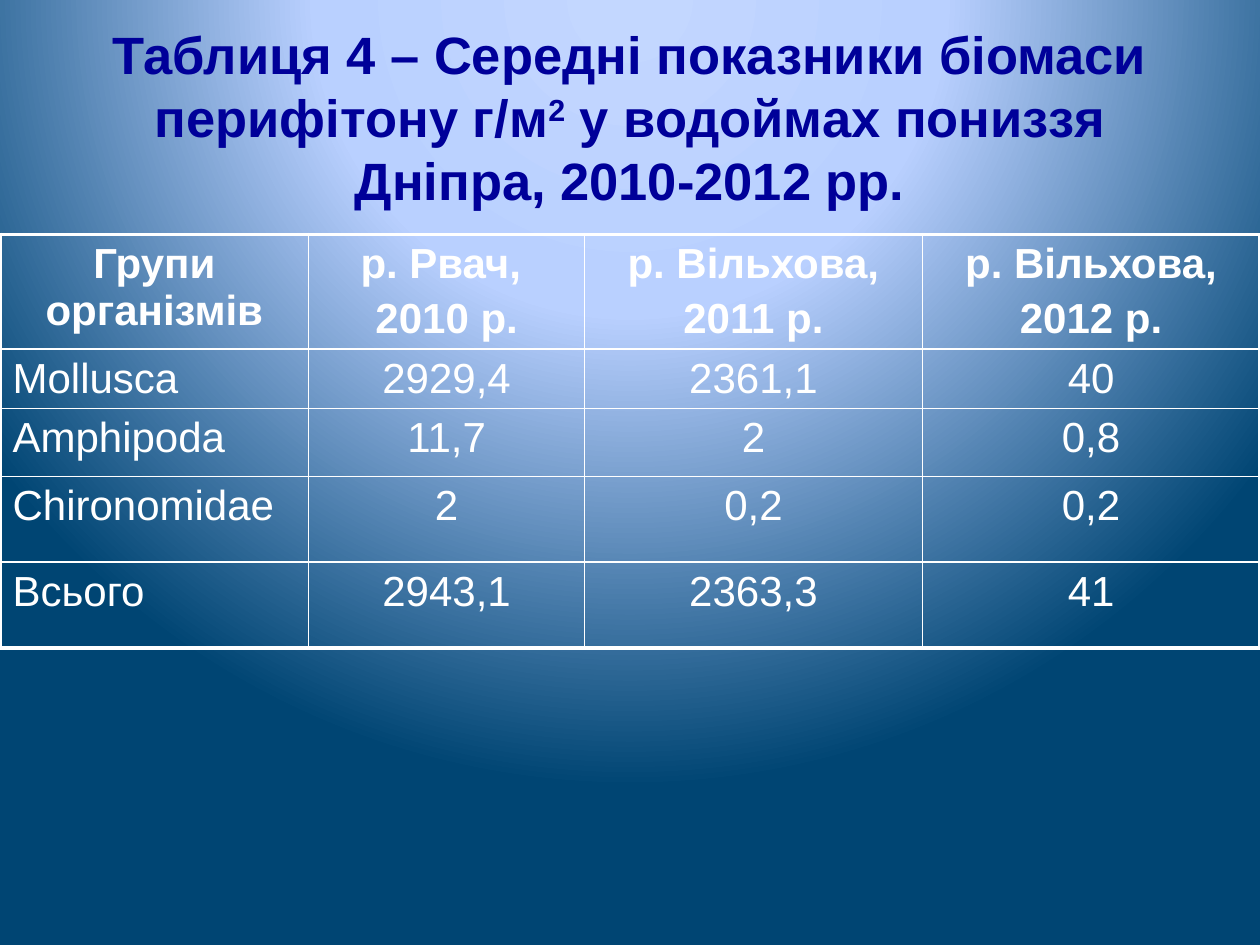
import pptx
import pptx.util
import pptx.dml.color
import pptx.enum.text
import pptx.oxml
from pptx.oxml.ns import nsdecls
from pptx.util import Inches, Pt

# Content
TITLE = [
    ("Таблиця 4 – Середні показники біомаси перифітону г/м", False),
    ("2", True),
    (" у водоймах пониззя Дніпра, 2010-2012 рр.", False),
]
BIOMASS = [
    ("Групи організмів", "р. Рвач, \n2010 р.", "р. Вільхова,\n2011 р.", "р. Вільхова,\n2012 р."),
    ("Mollusca", "2929,4", "2361,1", "40"),
    ("Amphipoda", "11,7", "2", "0,8"),
    ("Chironomidae", "2", "0,2", "0,2"),
    ("Всього", "2943,1", "2363,3", "41"),
]

# Layout and formats
COLUMN_WIDTHS = [2.45, 2.19, 2.68, 2.68]
ROW_HEIGHTS = [0.91, 0.47, 0.54, 0.68, 0.68]
TABLE_TOP = 1.86
INNER_LINE, OUTER_LINE = 1, 2.25
WHITE, NAVY = "FFFFFF", "000099"
BACKGROUND = [(0, "C3D7FF"), (40, "B9D0FF"), (100, "004573")]
TITLE_FONT = {"name": "Arial", "size": Pt(30), "bold": True}
HEADER_FONT = {"name": "Arial", "size": Pt(24), "bold": True}
BODY_FONT = {**HEADER_FONT, "bold": False}
ALIGN = pptx.enum.text.PP_ALIGN


def format_font(font, values, colour):
    for key, value in values.items():
        setattr(font, key, value)
    font.color.rgb = pptx.dml.color.RGBColor.from_string(colour)


def set_background(slide):
    stops = "".join(
        f'<a:gs pos="{position * 1000}"><a:srgbClr val="{colour}"/></a:gs>'
        for position, colour in BACKGROUND)
    gradient = pptx.oxml.parse_xml(
        f'<a:gradFill {nsdecls("a")} rotWithShape="1"><a:gsLst>{stops}</a:gsLst>'
        '<a:path path="circle"><a:fillToRect l="50000" t="-80000" r="50000" b="180000"/>'
        '</a:path></a:gradFill>')
    slide.background.fill.solid()
    properties = slide.background._cSld.bg.bgPr
    properties.replace(properties[0], gradient)


def set_borders(cell, widths):
    properties = cell._tc.get_or_add_tcPr()
    for side, width in widths.items():
        properties.append(pptx.oxml.parse_xml(
            f'<a:ln{side} {nsdecls("a")} w="{Pt(width)}"><a:solidFill>'
            f'<a:srgbClr val="{WHITE}"/></a:solidFill></a:ln{side}>'))


def add_title(slide):
    title = slide.shapes.title
    title.left, title.top, title.width, title.height = map(Inches, (0.5, 0.3, 9, 1.25))
    frame = title.text_frame
    frame.word_wrap = True
    frame.auto_size = pptx.enum.text.MSO_AUTO_SIZE.NONE
    frame.vertical_anchor = pptx.enum.text.MSO_ANCHOR.MIDDLE
    heading = frame.paragraphs[0]
    heading.alignment = ALIGN.CENTER
    for text, raised in TITLE:
        run = heading.add_run()
        run.text = text
        format_font(run.font, TITLE_FONT, NAVY)
        if raised:
            run._r.get_or_add_rPr().set("baseline", "30000")


def add_biomass_table(slide):
    last_row, last_column = len(BIOMASS) - 1, len(COLUMN_WIDTHS) - 1
    table = slide.shapes.add_table(
        len(BIOMASS), len(COLUMN_WIDTHS), 0, Inches(TABLE_TOP),
        Inches(sum(COLUMN_WIDTHS)), Inches(sum(ROW_HEIGHTS))).table
    table.first_row = table.horz_banding = False
    for column, width in zip(table.columns, COLUMN_WIDTHS):
        column.width = Inches(width)
    for row, height in zip(table.rows, ROW_HEIGHTS):
        row.height = Inches(height)

    for r, values in enumerate(BIOMASS):
        for c, value in enumerate(values):
            cell = table.cell(r, c)
            cell.text = value
            # Thick lines only on the outer edge
            on_edge = {"L": c == 0, "R": c == last_column, "T": r == 0, "B": r == last_row}
            set_borders(cell, {side: OUTER_LINE if edge else INNER_LINE
                               for side, edge in on_edge.items()})
            cell.fill.background()
            for paragraph in cell.text_frame.paragraphs:
                paragraph.alignment = ALIGN.LEFT if r and c == 0 else ALIGN.CENTER
                paragraph.space_before = Pt(4.8)
                for run in paragraph.runs:
                    format_font(run.font, BODY_FONT if r else HEADER_FONT, WHITE)


def main():
    deck = pptx.Presentation()
    deck.slide_width, deck.slide_height = Inches(10), Inches(7.5)
    slide = deck.slides.add_slide(deck.slide_layouts[5])
    set_background(slide)
    add_title(slide)
    add_biomass_table(slide)
    deck.save("out.pptx")


if __name__ == "__main__":
    main()
